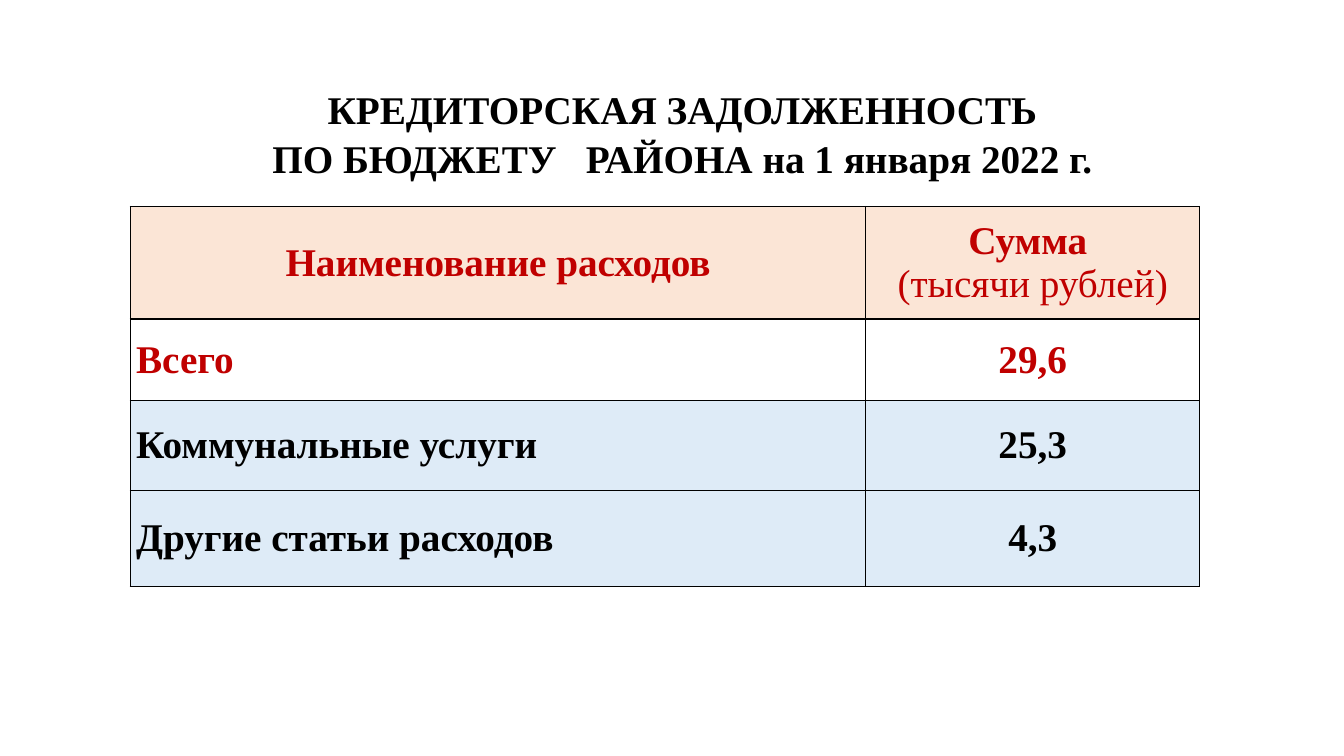
"""Build the slide on the district budget's accounts payable."""
from dataclasses import dataclass

from lxml.etree import SubElement as Sub
from pptx import Presentation
from pptx.dml.color import RGBColor as RGB
from pptx.enum.text import MSO_ANCHOR as Anchor
from pptx.enum.text import MSO_AUTO_SIZE as Fit
from pptx.enum.text import PP_ALIGN as Align
from pptx.oxml.ns import qn
from pptx.table import _Cell as Cell
from pptx.util import Cm, Pt

RED, BLACK, LINE = "C00000", "000000", "000000"
PEACH, WHITE, BLUE = "FBE5D6", "FFFFFF", "DEEBF7"


@dataclass
class Row:
    name: str
    sum: str
    tall: float
    ink: str
    fill: str
    side: Align = Align.JUSTIFY


ROWS = [
    Row("Наименование расходов", "Сумма \n(тысячи рублей)", 2.84, RED, PEACH, Align.CENTER),
    Row("Всего", "29,6", 2.06, RED, WHITE),
    Row("Коммунальные услуги", "25,3", 2.26, BLACK, BLUE),
    Row("Другие статьи расходов", "4,3", 2.41, BLACK, BLUE),
]
WIDTHS = [18.54, 8.41]
TITLE = " КРЕДИТОРСКАЯ ЗАДОЛЖЕННОСТЬ \nПО БЮДЖЕТУ   РАЙОНА на 1 января 2022 г."


def color(code: str) -> RGB:
    return RGB.from_string(code)


def style(frame, ink: str, side: Align) -> None:
    for para in frame.paragraphs:
        para.alignment = side
        for run in para.runs:
            font = run.font
            font.name, font.size, font.bold = "Times New Roman", Pt(28), True
            font.color.rgb = color(ink)


def border(cell: Cell) -> None:
    props = cell._tc.get_or_add_tcPr()
    for spot, tag in enumerate(("a:lnL", "a:lnR", "a:lnT", "a:lnB")):
        line = props.makeelement(qn(tag), {"w": str(Pt(1))})
        fill = Sub(line, qn("a:solidFill"))
        Sub(fill, qn("a:srgbClr"), val=LINE)
        props.insert(spot, line)


def draw_cell(cell: Cell, text: str, row: Row, side: Align) -> None:
    cell.text_frame.text = text
    style(cell.text_frame, row.ink, side)
    cell.vertical_anchor = Anchor.MIDDLE
    cell.margin_left = cell.margin_right = Cm(0.15)
    cell.margin_top = cell.margin_bottom = 0
    cell.fill.solid()
    cell.fill.fore_color.rgb = color(row.fill)
    border(cell)


def draw_title(slide) -> None:
    title = slide.shapes.title
    title.left, title.top = Cm(4.14), Cm(1.96)
    title.width, title.height = Cm(26.11), Cm(2.64)
    frame = title.text_frame
    frame.text = TITLE
    frame.word_wrap, frame.auto_size = True, Fit.NONE
    frame.vertical_anchor = Anchor.TOP
    style(frame, BLACK, Align.CENTER)
    for para in frame.paragraphs:
        para.line_spacing = 1.05


def draw_table(slide) -> None:
    high = sum(row.tall for row in ROWS)
    table = slide.shapes.add_table(
        len(ROWS), len(WIDTHS), Cm(3.28), Cm(5.2), Cm(sum(WIDTHS)), Cm(high)
    ).table
    table.first_row = table.horz_banding = False
    for col, width in zip(table.columns, WIDTHS):
        col.width = Cm(width)
    for num, row in enumerate(ROWS):
        table.rows[num].height = Cm(row.tall)
        draw_cell(table.cell(num, 0), row.name, row, row.side)
        draw_cell(table.cell(num, 1), row.sum, row, Align.CENTER)
    unit = table.cell(0, 1).text_frame.paragraphs[1]
    unit.runs[0].font.bold = False


def main() -> None:
    deck = Presentation()
    deck.slide_width, deck.slide_height = Cm(33.87), Cm(19.05)
    slide = deck.slides.add_slide(deck.slide_layouts[5])
    draw_title(slide)
    draw_table(slide)
    deck.save("out.pptx")


if __name__ == "__main__":
    main()
